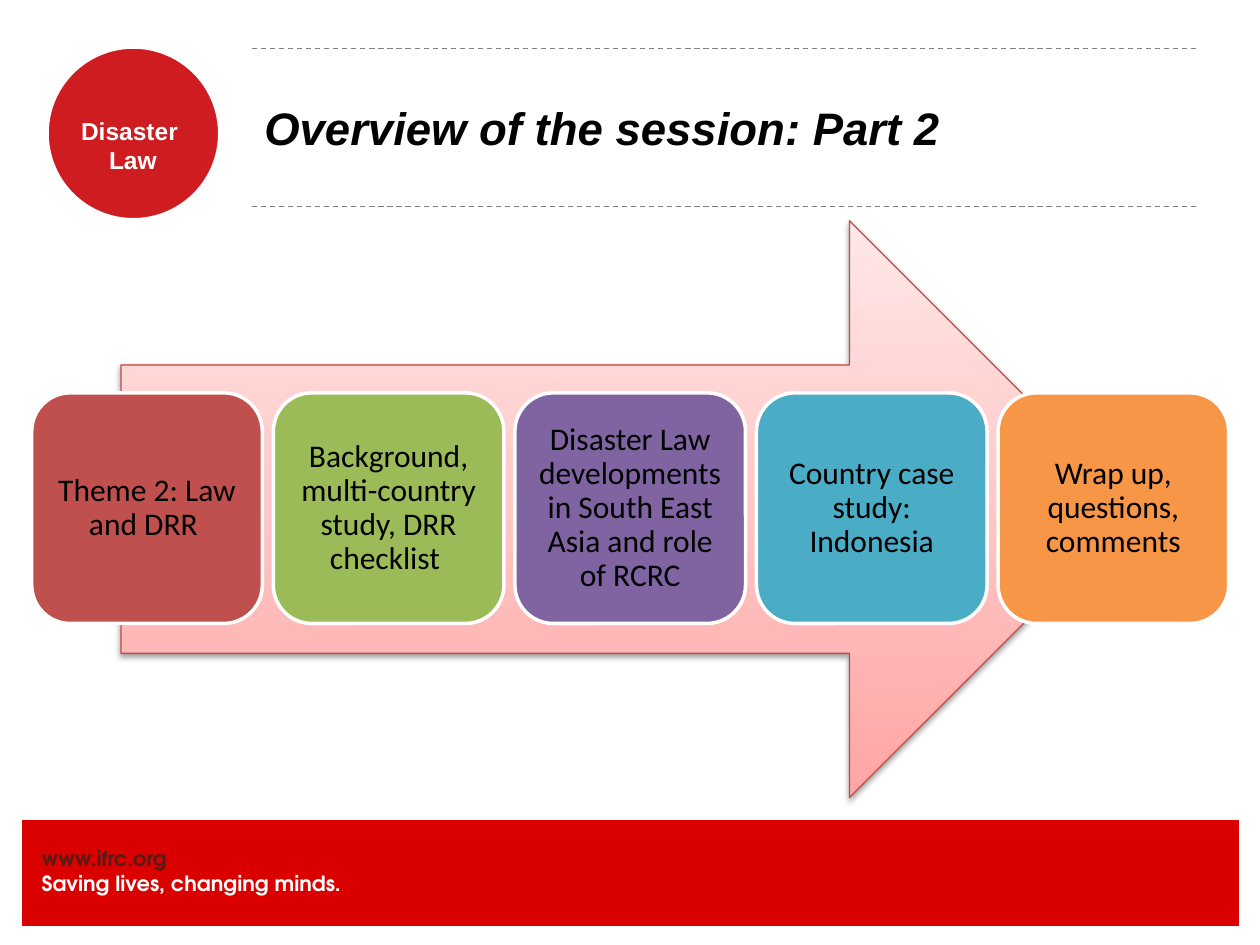
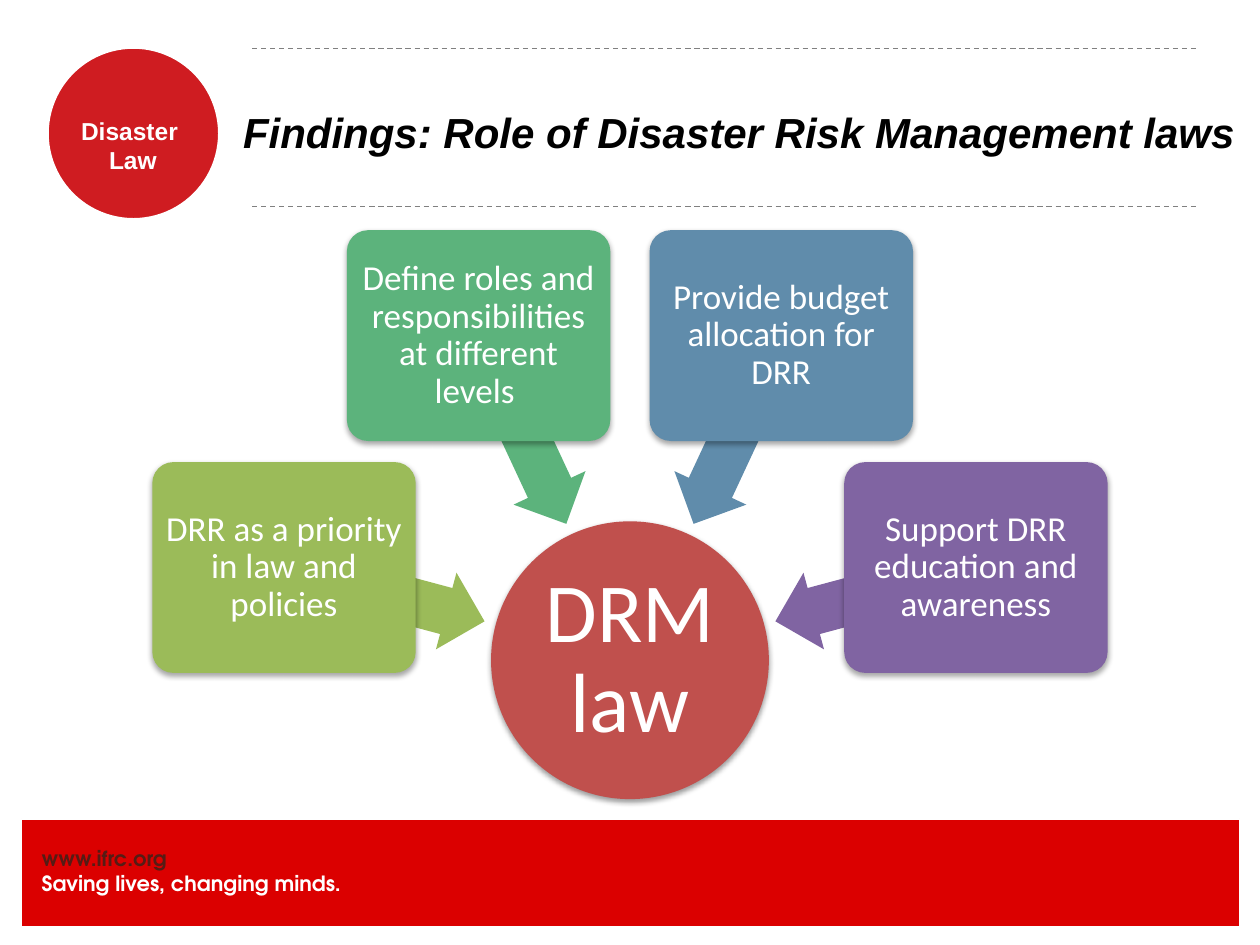
from math import cos, radians, sin

from lxml.etree import SubElement
from pptx import Presentation
from pptx.dml.color import RGBColor
from pptx.enum.dml import MSO_LINE
from pptx.enum.shapes import MSO_CONNECTOR, MSO_SHAPE
from pptx.enum.text import MSO_ANCHOR, PP_ALIGN
from pptx.oxml.ns import qn
from pptx.util import Cm, Pt

COLORS = {
    "band": "DB0000", "badge": "CF1C21", "url": "551C15", "rule": "808080",
    "white": "FFFFFF", "black": "000000", "red": "C0504D", "lime": "9BBB59",
    "purple": "8064A2", "aqua": "4BACC6", "orange": "F79646",
    "green": "5CB37C", "blue": "608CAB", "arrow_line": "BF4C48",
    "arrow_bottom": "FFA6A5", "arrow_top": "FFE7E7",
}
HEADING_FONT, FOOTER_FONT, BODY_FONT = "Arial", "TeX Gyre Adventor", "Calibri"

STEPS = [
    ("Theme 2: Law and DRR ", "red"),
    ("Background, multi-country study, DRR checklist ", "lime"),
    ("Disaster Law developments in South East Asia and role of RCRC", "purple"),
    ("Country case study: Indonesia", "aqua"),
    ("Wrap up, questions, comments", "orange"),
]
ROLES = [
    ("DRR as a priority in law and policies", "lime"),
    ("Define roles and responsibilities at different levels ", "green"),
    ("Provide budget allocation for DRR", "blue"),
    ("Support DRR education and awareness", "purple"),
]


def rgb(name):
    return RGBColor.from_string(COLORS[name])


def add_block(s, kind, left, top, width, height, fill, line=None, line_width=0.75):
    sp = s.shapes.add_shape(kind, Cm(left), Cm(top), Cm(width), Cm(height))
    sp.shadow.inherit = False
    sp.fill.solid()
    sp.fill.fore_color.rgb = rgb(fill)
    if line:
        sp.line.color.rgb = rgb(line)
        sp.line.width = Pt(line_width)
    else:
        sp.line.fill.background()
    return sp


def add_centered(s, kind, x, y, width, height, fill):
    return add_block(s, kind, x - width / 2, y - height / 2, width, height, fill)


def add_shadow(sp, alpha):
    effects = sp._element.spPr.find(qn("a:effectLst"))
    shadow = SubElement(effects, qn("a:outerShdw"), blurRad=str(Pt(3.1)),
                        dist=str(Pt(1.7)), dir="5400000", rotWithShape="0")
    color = SubElement(shadow, qn("a:srgbClr"), val=COLORS["black"])
    SubElement(color, qn("a:alpha"), val=str(alpha * 1000))


def write(sp, lines, size, font, color, inset=0.0, align=PP_ALIGN.CENTER,
          anchor=MSO_ANCHOR.MIDDLE, spacing=None, bold=False, italic=False):
    tf = sp.text_frame
    tf.word_wrap = True
    tf.vertical_anchor = anchor
    tf.margin_left = tf.margin_right = tf.margin_top = tf.margin_bottom = Cm(inset)
    tf.text = "\n".join(lines)
    for p in tf.paragraphs:
        p.alignment = align
        p.line_spacing = spacing
        p.font.size = Pt(size)
        p.font.name = font
        p.font.bold = bold
        p.font.italic = italic
        p.font.color.rgb = rgb(color)
    return tf


def add_text(s, left, top, width, height, lines, size, font, color, **style):
    sp = s.shapes.add_textbox(Cm(left), Cm(top), Cm(width), Cm(height))
    return write(sp, lines, size, font, color, **style)


def add_rule(s, y):
    line = s.shapes.add_connector(MSO_CONNECTOR.STRAIGHT, Cm(5.08), Cm(y), Cm(24.13), Cm(y))
    line.line.color.rgb = rgb("rule")
    line.line.width = Pt(0.75)
    line.line.dash_style = MSO_LINE.DASH
    SubElement(line._element.spPr, qn("a:effectLst"))


def add_frame(prs):
    s = prs.slides.add_slide(prs.slide_layouts[6])
    add_block(s, MSO_SHAPE.RECTANGLE, 0.43, 16.51, 24.56, 2.18, "band", "white")
    tf = add_text(s, 0.84, 17.04, 8.69, 1.02,
                  ["www.ifrc.org", "Saving lives, changing minds."],
                  12, FOOTER_FONT, "white", align=PP_ALIGN.LEFT,
                  anchor=MSO_ANCHOR.TOP, bold=True)
    tf.paragraphs[0].font.color.rgb = rgb("url")
    add_block(s, MSO_SHAPE.OVAL, 0.94, 0.94, 3.5, 3.5, "badge", "white", 2.5)
    add_text(s, 1.09, 2.34, 3.18, 1.19, ["Disaster ", "Law"], 14, HEADING_FONT,
             "white", anchor=MSO_ANCHOR.TOP, bold=True)
    for y in (0.98, 4.16):
        add_rule(s, y)
    return s


def add_title(s, text, left, top, width, size):
    add_text(s, left, top, width, 3.18, [text], size, HEADING_FONT, "black",
             inset=0.25, align=PP_ALIGN.LEFT, bold=True, italic=True)


def add_process_arrow(s):
    sp = add_block(s, MSO_SHAPE.RIGHT_ARROW, 2.44, 4.45, 20.5, 11.63,
                   "arrow_top", "arrow_line")
    sp.fill.gradient()
    sp.fill.gradient_angle = 90
    for stop, name in zip(sp.fill.gradient_stops, ("arrow_bottom", "arrow_top")):
        stop.color.rgb = rgb(name)
    add_shadow(sp, 38)


def add_step(s, index, text, fill):
    size, pitch = 4.65, 4.87
    sp = add_block(s, MSO_SHAPE.ROUNDED_RECTANGLE, 0.64 + index * pitch, 7.92,
                   size, size, fill, "white", 2)
    write(sp, [text], 18, BODY_FONT, "black", inset=0.18, spacing=0.9)


def add_role(s, hub_x, hub_y, angle, text, fill):
    dx, dy = cos(radians(angle)), sin(radians(angle))
    arrow = add_centered(s, MSO_SHAPE.LEFT_ARROW, hub_x + 5.12 * dx,
                         hub_y + 5.12 * dy, 4.17, 1.6, fill)
    arrow.adjustments[0], arrow.adjustments[1] = 0.6, 0.5
    arrow.rotation = angle
    card = add_centered(s, MSO_SHAPE.ROUNDED_RECTANGLE, hub_x + 7.22 * dx,
                        hub_y + 7.22 * dy, 5.31, 4.25, fill)
    card.adjustments[0] = 0.1
    add_shadow(card, 35)
    write(card, [text], 20, BODY_FONT, "white", inset=0.1, spacing=0.9)


def build_overview(prs):
    s = add_frame(prs)
    add_title(s, "Overview of the session: Part 2", 5.08, 0.97, 19.05, 26)
    add_process_arrow(s)
    for i, (text, fill) in enumerate(STEPS):
        add_step(s, i, text, fill)


def build_findings(prs):
    s = add_frame(prs)
    add_title(s, "Findings: Role of Disaster Risk Management laws", 4.65, 1.07, 20.75, 24)
    hub_x, hub_y = 12.7, 13.31
    hub = add_centered(s, MSO_SHAPE.OVAL, hub_x, hub_y, 5.6, 5.6, "red")
    add_shadow(hub, 38)
    write(hub, ["DRM law"], 48, BODY_FONT, "white", inset=0.08, spacing=0.9)
    for i, (text, fill) in enumerate(ROLES):
        add_role(s, hub_x, hub_y, 195 + 50 * i, text, fill)


def main():
    prs = Presentation()
    prs.slide_width, prs.slide_height = Cm(25.4), Cm(19.05)
    build_overview(prs)
    build_findings(prs)
    prs.save("out.pptx")


if __name__ == "__main__":
    main()
